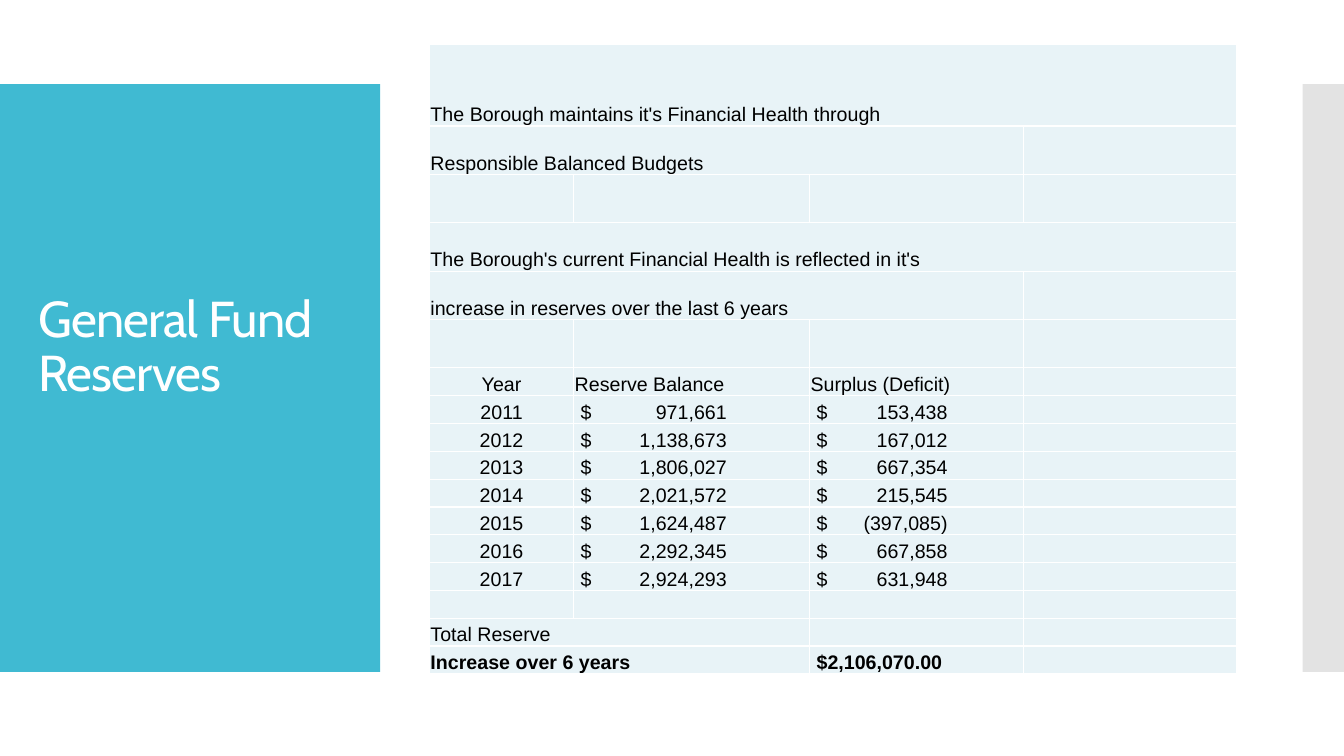
from lxml.etree import SubElement as Sub
from pptx import Presentation
from pptx.dml.color import RGBColor as RGB
from pptx.enum.shapes import MSO_SHAPE as SHAPE
from pptx.enum.text import MSO_ANCHOR as ANCHOR, PP_ALIGN as ALIGN
from pptx.oxml.ns import qn
from pptx.util import Inches, Pt

HUES = {"teal": "40BAD2", "grey": "C8C8C8", "ice": "E8F3F7",
        "white": "FFFFFF", "black": "000000"}
WIDE, HIGH = 13.33, 7.5
COLS = [1.43, 2.34, 2.12, 2.12]
TABS = {1: 1.45, 2: 1.3}
TOP, MID, COUNT = 0.81, 0.48, 17
YEARS = [
    ("2011", "971,661", "153,438"),
    ("2012", "1,138,673", "167,012"),
    ("2013", "1,806,027", "667,354"),
    ("2014", "2,021,572", "215,545"),
    ("2015", "1,624,487", "(397,085)"),
    ("2016", "2,292,345", "667,858"),
    ("2017", "2,924,293", "631,948"),
]
LINES = [
    (0, 4, "The Borough maintains it's Financial Health through"),
    (1, 3, "Responsible Balanced Budgets"),
    (3, 4, "The Borough's current Financial Health is reflected in it's"),
    (4, 3, "increase in reserves over the last 6 years"),
    (15, 2, "Total Reserve"),
    (16, 2, "Increase over 6 years"),
]
HEADS = ["Year", "Reserve Balance", "Surplus (Deficit)"]


def write(frame, text, size=14, font="Arial", hue="black", bold=False,
          align=ALIGN.LEFT, space=None, tab=None):
    """Put one formatted paragraph into a text frame."""
    para = frame.paragraphs[0]
    para.alignment = align
    if not text:
        Sub(para._p, qn("a:endParaRPr"), sz=str(size * 100))
        return
    run = para.add_run()
    run.text = text
    run.font.size, run.font.name, run.font.bold = Pt(size), font, bold
    run.font.color.rgb = RGB.from_string(HUES[hue])
    if space:
        run.font._element.set("spc", str(space))
    if tab:
        stops = Sub(para._p.get_or_add_pPr(), qn("a:tabLst"))
        Sub(stops, qn("a:tab"), pos=str(Inches(tab)), algn="r")


def panel(slide, box, hue, alpha=None):
    """Draw a plain colour block in the box."""
    block = slide.shapes.add_shape(SHAPE.RECTANGLE, *map(Inches, box))
    block.shadow.inherit = False
    block.line.fill.background()
    block.fill.solid()
    block.fill.fore_color.rgb = RGB.from_string(HUES[hue])
    if alpha:
        tint = block._element.spPr.find(".//" + qn("a:srgbClr"))
        Sub(tint, qn("a:alpha"), val=str(alpha * 1000))


def sidebar(slide, box):
    """Fill the box with teal and set the title inside it."""
    panel(slide, box, "teal")
    left, top, wide, high = box
    title = slide.shapes.title
    slide.shapes._spTree.append(title._element)
    title.left, title.top = Inches(left + 0.28), Inches(top + 0.4)
    title.width, title.height = Inches(wide - 0.55), Inches(high - 0.8)
    frame = title.text_frame
    frame.word_wrap = True
    frame.vertical_anchor = ANCHOR.MIDDLE
    frame.margin_bottom = Inches(0.64)
    write(frame, "General Fund Reserves", size=36, font="Cabin",
          hue="white", space=-60)
    frame.paragraphs[0].line_spacing = 0.9


def style(cell):
    """Give a cell its white borders, fill and insets."""
    props = cell._tc.get_or_add_tcPr()
    for side in "LRTB":
        edge = Sub(props, qn("a:ln" + side), w=str(Pt(1)))
        Sub(Sub(edge, qn("a:solidFill")), qn("a:srgbClr"), val=HUES["white"])
    cell.fill.solid()
    cell.fill.fore_color.rgb = RGB.from_string(HUES["ice"])
    cell.margin_left = cell.margin_right = cell.margin_top = Inches(0.01)
    cell.margin_bottom = 0
    cell.vertical_anchor = ANCHOR.BOTTOM


def content():
    """Map each filled cell to its text."""
    cells = {(row, 0): text for row, _, text in LINES}
    cells.update({(6, col): text for col, text in enumerate(HEADS)})
    for row, (year, *sums) in enumerate(YEARS, 7):
        cells[row, 0] = year
        cells.update({(row, col): "$\t" + value
                      for col, value in enumerate(sums, 1)})
    cells[16, 2] = "$2,106,070.00"
    return cells


def ledger(slide, box):
    """Build the reserves table in the box."""
    table = slide.shapes.add_table(COUNT, len(COLS), *map(Inches, box)).table
    table.first_row = table.horz_banding = False
    for col, wide in zip(table.columns, COLS):
        col.width = Inches(wide)
    low = (box[3] - TOP - 5 * MID) / 11
    for row, high in zip(table.rows, [TOP] + [MID] * 5 + [low] * 11):
        row.height = Inches(high)
    for row, span, _ in LINES:
        table.cell(row, 0).merge(table.cell(row, span - 1))
    cells = content()
    for row in range(COUNT):
        for col in range(len(COLS)):
            cell, text = table.cell(row, col), cells.get((row, col), "")
            style(cell)
            money = text.startswith("$")
            if money:
                cell.margin_left = Inches(0.07)
            mid = col == 0 and 6 <= row <= 13
            write(cell.text_frame, text, bold=row == 16,
                  align=ALIGN.CENTER if mid else ALIGN.LEFT,
                  tab=TABS[col] if "\t" in text else None)


def main():
    """Build and save the slide."""
    deck = Presentation()
    deck.slide_width, deck.slide_height = Inches(WIDE), Inches(HIGH)
    slide = deck.slides.add_slide(deck.slide_layouts[5])
    top, high = HIGH / 9, HIGH * 7 / 9
    sidebar(slide, (0, top, 3.77, high))
    panel(slide, (WIDE - 0.41, top, 0.41, high), "grey", alpha=50)
    ledger(slide, (4.26, 0.44, sum(COLS), 6.25))
    deck.save("out.pptx")


if __name__ == "__main__":
    main()
